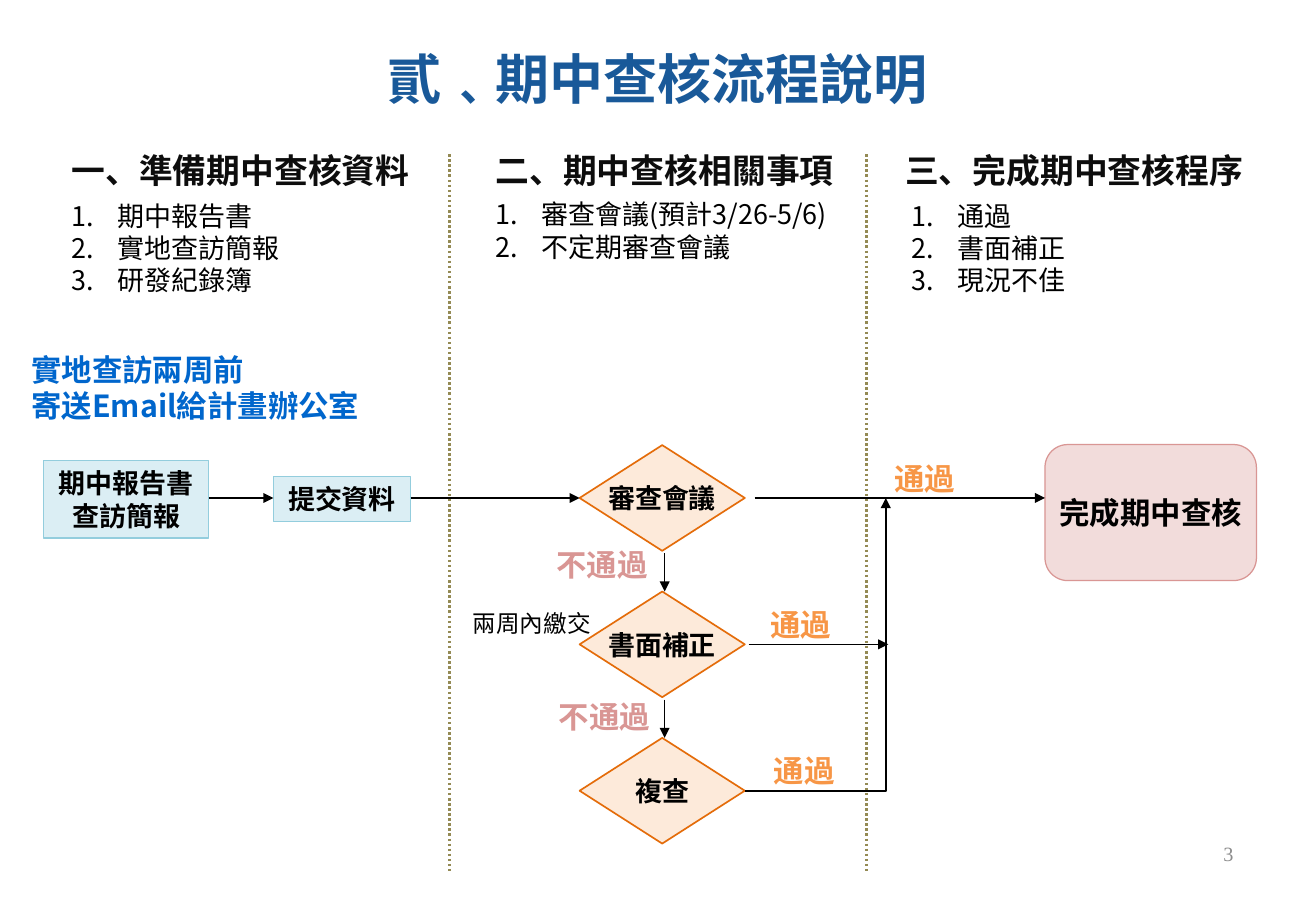
from lxml.etree import SubElement
from pptx import Presentation
from pptx.dml.color import RGBColor
from pptx.enum.dml import MSO_LINE
from pptx.enum.shapes import MSO_CONNECTOR, MSO_SHAPE
from pptx.enum.text import MSO_ANCHOR, MSO_AUTO_SIZE, PP_ALIGN
from pptx.oxml.ns import qn
from pptx.util import Inches, Pt

SANS, LATIN, SERIF = "Noto Sans CJK SC", "Arial", "Times New Roman"
COLORS = {
    "title": "195999", "heading": "0D0D0D", "text": "000000", "note": "0066CC",
    "pass": "F79646", "fail": "D99694", "divider": "948A54", "number": "8C8C8C",
    "input": "DBEEF4", "input_line": "93CDDD", "step": "FDEADA",
    "step_line": "E46C0A", "done": "F2DCDB", "done_line": "D99694",
}

TITLE = [("貳", LATIN), ("﹑", SANS), ("期中查核流程說明", LATIN)]
# heading, heading left, list items, list left, list top
COLUMNS = [
    ("一、準備期中查核資料", 0.49, ["期中報告書", "實地查訪簡報", "研發紀錄簿"], 0.49, 1.59),
    ("二、期中查核相關事項", 3.98, ["審查會議(預計3/26-5/6)", "不定期審查會議"], 3.98, 1.58),
    ("三、完成期中查核程序", 7.35, ["通過", "書面補正", "現況不佳"], 7.4, 1.59),
]
STEPS = ["審查會議", "書面補正", "複查"]
NOTE = ["實地查訪兩周前", "寄送Email給計畫辦公室"]
# text, color, size, left, top, width
LABELS = [
    (["通過"], "pass", 18, 7.26, 3.74, 0.72),
    (["通過"], "pass", 18, 6.24, 4.94, 0.72),
    (["通過"], "pass", 18, 6.27, 6.14, 0.72),
    (["不通過"], "fail", 18, 4.48, 4.45, 0.96),
    (["不通過"], "fail", 18, 4.5, 5.7, 0.96),
    (["兩周內繳交"], "text", 14, 3.79, 4.96, 1.38),
]

# Flow grid: three rows of diamonds on one axis
ROW_TOP, ROW_STEP = 4.1, 1.205
ROWS = [ROW_TOP + ROW_STEP * i for i in range(len(STEPS))]
AXIS, STEP_WIDTH, STEP_HEIGHT = 5.45, 1.36, 0.87
STEP_LEFT, STEP_RIGHT = AXIS - STEP_WIDTH / 2, AXIS + STEP_WIDTH / 2
INPUT_LEFT, INPUT_RIGHT = 0.36, 1.72
SUBMIT_LEFT, SUBMIT_RIGHT = 2.25, 3.38
DONE_LEFT, JOIN = 8.6, 7.29
DIVIDERS = [3.7, 7.13]

presentation = Presentation()
presentation.slide_width, presentation.slide_height = Inches(10.83), Inches(7.5)
slide = presentation.slides.add_slide(presentation.slide_layouts.get_by_name("Comparison"))


def rgb(name):
    return RGBColor.from_string(COLORS[name])


def place(shape, left, top, width, height):
    shape.left, shape.top = Inches(left), Inches(top)
    shape.width, shape.height = Inches(width), Inches(height)


def write(shape, lines, size, color="text", bold=True, align=PP_ALIGN.LEFT,
          anchor=MSO_ANCHOR.TOP, wrap=True, font=SANS, numbered=False):
    frame = shape.text_frame
    frame.text = "\n".join(lines)
    frame.word_wrap, frame.auto_size = wrap, MSO_AUTO_SIZE.NONE
    frame.vertical_anchor = anchor
    for paragraph in frame.paragraphs:
        paragraph.alignment = align
        paragraph.space_before = Pt(0)
        properties = paragraph._p.get_or_add_pPr()
        if numbered:
            properties.set("marL", str(Inches(0.38)))
            properties.set("indent", str(-Inches(0.38)))
            SubElement(properties, qn("a:buFont"), typeface=SANS)
            SubElement(properties, qn("a:buAutoNum"), type="arabicPeriod")
        paragraph.font.name, paragraph.font.size = font, Pt(size)
        paragraph.font.bold = bold
        paragraph.font.color.rgb = rgb(color)
        SubElement(properties.find(qn("a:defRPr")), qn("a:ea"), typeface=font)


def add_text(lines, size, left, top, width, height, **style):
    box = slide.shapes.add_textbox(0, 0, 0, 0)
    place(box, left, top, width, height)
    write(box, lines, size, **style)


def add_box(kind, lines, size, left, middle, width, height, fill, line_width=0.75):
    box = slide.shapes.add_shape(kind, 0, 0, 0, 0)
    place(box, left, middle - height / 2, width, height)
    box.shadow.inherit = False
    box.fill.solid()
    box.fill.fore_color.rgb = rgb(fill)
    box.line.color.rgb = rgb(fill + "_line")
    box.line.width = Pt(line_width)
    write(box, lines, size, align=PP_ALIGN.CENTER, anchor=MSO_ANCHOR.MIDDLE, wrap=False)


def add_line(x1, y1, x2, y2, color="text", width=1.0, arrow=True, corner=False):
    kind = MSO_CONNECTOR.ELBOW if corner else MSO_CONNECTOR.STRAIGHT
    line = slide.shapes.add_connector(kind, *map(Inches, (x1, y1, x2, y2)))
    line.line.color.rgb, line.line.width = rgb(color), Pt(width)
    properties = line._element.spPr
    if corner:
        properties.find(qn("a:prstGeom")).set("prst", "bentConnector2")
    if arrow:
        SubElement(line.line._get_or_add_ln(), qn("a:tailEnd"), type="triangle")
    else:
        line.line.dash_style = MSO_LINE.ROUND_DOT
    SubElement(properties, qn("a:effectLst"))


# Title
title = slide.shapes.title
place(title, 0.49, 0.4, 9.84, 0.48)
write(title, [""], 32, "title", align=PP_ALIGN.CENTER, anchor=MSO_ANCHOR.MIDDLE, wrap=False)
for text, font in TITLE:
    run = title.text_frame.paragraphs[0].add_run()
    run.text, run.font.name = text, font

# Columns
first, second, spare, third = list(slide.placeholders)[1:5]
spare._element.getparent().remove(spare._element)
for body, (heading, heading_left, items, left, top) in zip((first, second, third), COLUMNS):
    add_text([heading], 20, heading_left, 1.18, 2.99, 0.44, color="heading")
    place(body, left, top, 3, 0.9)
    write(body, items, 16, bold=False, numbered=True)
for x in DIVIDERS:
    add_line(x, 1.27, x, 7.18, "divider", 1.5, arrow=False)

# Flow boxes
add_text(NOTE, 18, 0.16, 2.84, 3.22, 0.71, color="note")
add_box(MSO_SHAPE.RECTANGLE, ["期中報告書", "查訪簡報"], 16, INPUT_LEFT, ROW_TOP + 0.01,
        INPUT_RIGHT - INPUT_LEFT, 0.64, "input")
add_box(MSO_SHAPE.RECTANGLE, ["提交資料"], 16, SUBMIT_LEFT, ROW_TOP + 0.01,
        SUBMIT_RIGHT - SUBMIT_LEFT, 0.37, "input")
for step, row in zip(STEPS, ROWS):
    add_box(MSO_SHAPE.DIAMOND, [step], 16, STEP_LEFT, row, STEP_WIDTH, STEP_HEIGHT, "step", 1)
add_box(MSO_SHAPE.FLOWCHART_ALTERNATE_PROCESS, ["完成期中查核"], 18, DONE_LEFT, 4.22,
        1.74, 1.12, "done")

# Flow arrows
add_line(INPUT_RIGHT, ROW_TOP, SUBMIT_LEFT, ROW_TOP)
add_line(SUBMIT_RIGHT, ROW_TOP, STEP_LEFT, ROW_TOP)
add_line(STEP_RIGHT + 0.08, ROW_TOP, DONE_LEFT, ROW_TOP)
add_line(STEP_RIGHT + 0.03, ROWS[1], JOIN + 0.02, ROWS[1], width=0.75)
add_line(STEP_RIGHT, ROWS[2], JOIN, ROW_TOP, corner=True)
for upper, lower in zip(ROWS, ROWS[1:]):
    add_line(AXIS + 0.02, upper + STEP_HEIGHT / 2 + 0.02, AXIS + 0.02, lower - STEP_HEIGHT / 2)

for lines, color, size, left, top, width in LABELS:
    add_text(lines, size, left, top, width, 0.4, color=color, bold=size > 14, wrap=False)
add_text(["3"], 12, 7.81, 6.83, 2.44, 0.4, color="number", bold=False,
         align=PP_ALIGN.RIGHT, anchor=MSO_ANCHOR.MIDDLE, font=SERIF)

presentation.save("out.pptx")
